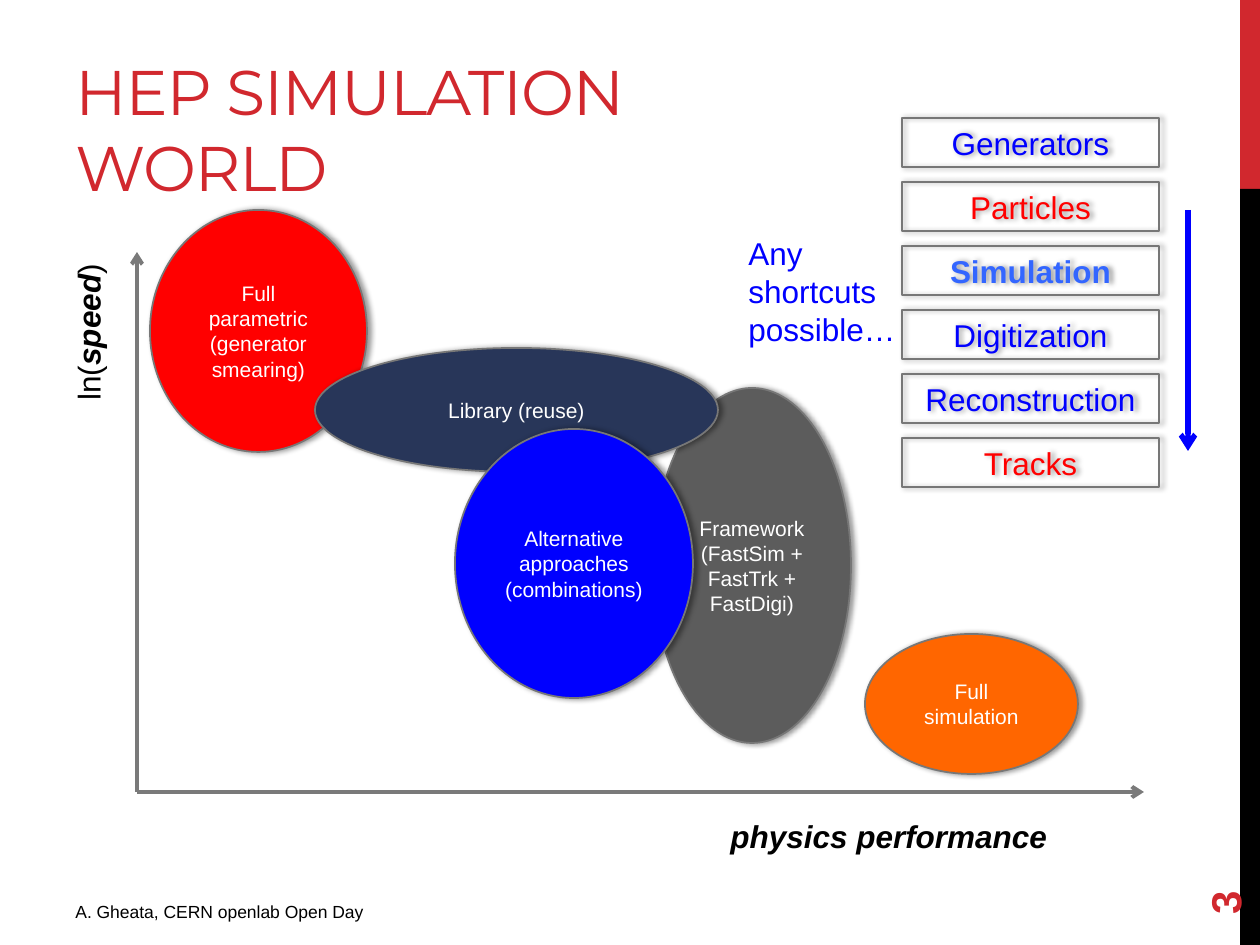
import pptx
import pptx.util
import pptx.dml.color
import pptx.enum.shapes
import pptx.enum.text
import pptx.oxml
import pptx.oxml.ns

EMU_PER_PX = 914400 / 126
SHAPE = pptx.enum.shapes.MSO_SHAPE
STRAIGHT = pptx.enum.shapes.MSO_CONNECTOR.STRAIGHT
ALIGN = pptx.enum.text.PP_ALIGN
ANCHOR = pptx.enum.text.MSO_ANCHOR
SHADOW = (
    f'<a:effectLst {pptx.oxml.ns.nsdecls("a")}>'
    '<a:outerShdw blurRad="39370" dist="22860" dir="0" rotWithShape="0">'
    '<a:srgbClr val="000000"><a:alpha val="40000"/></a:srgbClr>'
    '</a:outerShdw></a:effectLst>'
)
ARROWHEAD = f'<a:tailEnd {pptx.oxml.ns.nsdecls("a")} type="arrow"/>'
NO_EFFECTS = f'<a:effectLst {pptx.oxml.ns.nsdecls("a")}/>'


def rgb(code):
    return pptx.dml.color.RGBColor.from_string(code)


def write(shape, *paragraphs, size, color, font="Arial", bold=False, italic=False,
          align=ALIGN.LEFT, anchor=ANCHOR.TOP, spacing=0):
    """Fill a shape with paragraphs; a list holds (text, emphasised) runs."""
    frame = shape.text_frame
    frame.word_wrap = True
    frame.vertical_anchor = anchor
    for index, content in enumerate(paragraphs):
        paragraph = frame.add_paragraph() if index else frame.paragraphs[0]
        paragraph.alignment = align
        runs = [(content, False)] if isinstance(content, str) else content
        for text, emphasised in runs:
            run = paragraph.add_run()
            run.text = text
            run.font.name = font
            run.font.size = pptx.util.Pt(size)
            run.font.bold = bold or emphasised
            run.font.italic = italic or emphasised
            run.font.color.rgb = rgb(color)
            if spacing:
                run.font._element.set("spc", str(spacing))


presentation = pptx.Presentation()
presentation.slide_width = pptx.util.Inches(10)
presentation.slide_height = pptx.util.Inches(7.5)
slide = presentation.slides.add_slide(presentation.slide_layouts[6])

# Side band
for top, height, color in [(0, 189, "D1282E"), (189, 756, "000000")]:
    band = slide.shapes.add_shape(
        SHAPE.RECTANGLE, *(round(v * EMU_PER_PX) for v in (1240, top, 20, height)))
    band.shadow.inherit = False
    band.fill.solid()
    band.fill.fore_color.rgb = rgb(color)
    band.line.fill.background()

# Axes and the arrow beside the processing chain
for x1, y1, x2, y2, color, width in [
    (137, 792, 1144, 792, "7A7A7A", 2.25),
    (137, 792, 137, 252, "7A7A7A", 2.25),
    (1188, 210, 1188, 451, "0000FF", 3),
]:
    arrow = slide.shapes.add_connector(
        STRAIGHT, *(round(v * EMU_PER_PX) for v in (x1, y1, x2, y2)))
    arrow.line.color.rgb = rgb(color)
    arrow.line.width = pptx.util.Pt(width)
    arrow.line._get_or_add_ln().append(pptx.oxml.parse_xml(ARROWHEAD))
    arrow._element.spPr.append(pptx.oxml.parse_xml(NO_EFFECTS))

# Title, axis labels, question, footer and page number
for box, rotation, content, style in [
    ((63, 21, 798, 189), 0, "HEP SIMULATION WORLD",
     dict(size=36, color="D1282E", font="Montserrat", anchor=ANCHOR.BOTTOM, spacing=-60)),
    ((63, 895, 472, 39), 0, "A. Gheata, CERN openlab Open Day",
     dict(size=10, color="000000")),
    ((3, 302, 171, 51), 270, [("ln(", False), ("speed", True), (")", False)],
     dict(size=18, color="000000")),
    ((718, 811, 426, 51), 0, "physics performance",
     dict(size=18, color="000000", bold=True, italic=True)),
    ((736, 228, 194, 127), 0, "Any shortcuts possible…",
     dict(size=18, color="0000FF")),
    ((1134, 811, 181, 51), 270, "3",
     dict(size=24, color="D1282E", bold=True, anchor=ANCHOR.MIDDLE)),
]:
    label = slide.shapes.add_textbox(*(round(v * EMU_PER_PX) for v in box))
    label.rotation = rotation
    write(label, content, **style)

# Simulation approaches, from back to front, then the processing chain
approaches = [
    (SHAPE.OVAL, (150, 210, 217, 242), "FF0000", ["Full parametric (generator smearing)"],
     dict(size=12, color="FFFFFF")),
    (SHAPE.OVAL, (865, 634, 213, 140), "FF6600", ["Full simulation"],
     dict(size=12, color="FFFFFF")),
    (SHAPE.OVAL, (653, 388, 198, 355), "5C5C5C",
     ["Framework", "(FastSim +", "FastTrk + FastDigi)"], dict(size=12, color="FFFFFF")),
    (SHAPE.OVAL, (315, 348, 403, 124), "283659", ["Library (reuse)"],
     dict(size=12, color="FFFFFF")),
    (SHAPE.OVAL, (455, 429, 238, 269), "0000FF",
     ["Alternative approaches", "(combinations)"], dict(size=12, color="FFFFFF")),
]
steps = [
    ("Generators", "0000FF"), ("Particles", "FF0000"), ("Simulation", "3366FF"),
    ("Digitization", "0000FF"), ("Reconstruction", "0000FF"), ("Tracks", "FF0000"),
]
chain = [
    (SHAPE.RECTANGLE, (902, 118 + 64 * index, 257, 49), None, [step],
     dict(size=18, color=color, bold=step == "Simulation"))
    for index, (step, color) in enumerate(steps)
]
for outline, box, fill, lines, style in approaches + chain:
    node = slide.shapes.add_shape(outline, *(round(v * EMU_PER_PX) for v in box))
    if fill:
        node.fill.solid()
        node.fill.fore_color.rgb = rgb(fill)
    else:
        node.fill.background()
    node.line.color.rgb = rgb("777777")
    node.line.width = pptx.util.Pt(1)
    node._element.spPr.append(pptx.oxml.parse_xml(SHADOW))
    write(node, *lines, align=ALIGN.CENTER, anchor=ANCHOR.MIDDLE, **style)

presentation.save("out.pptx")
